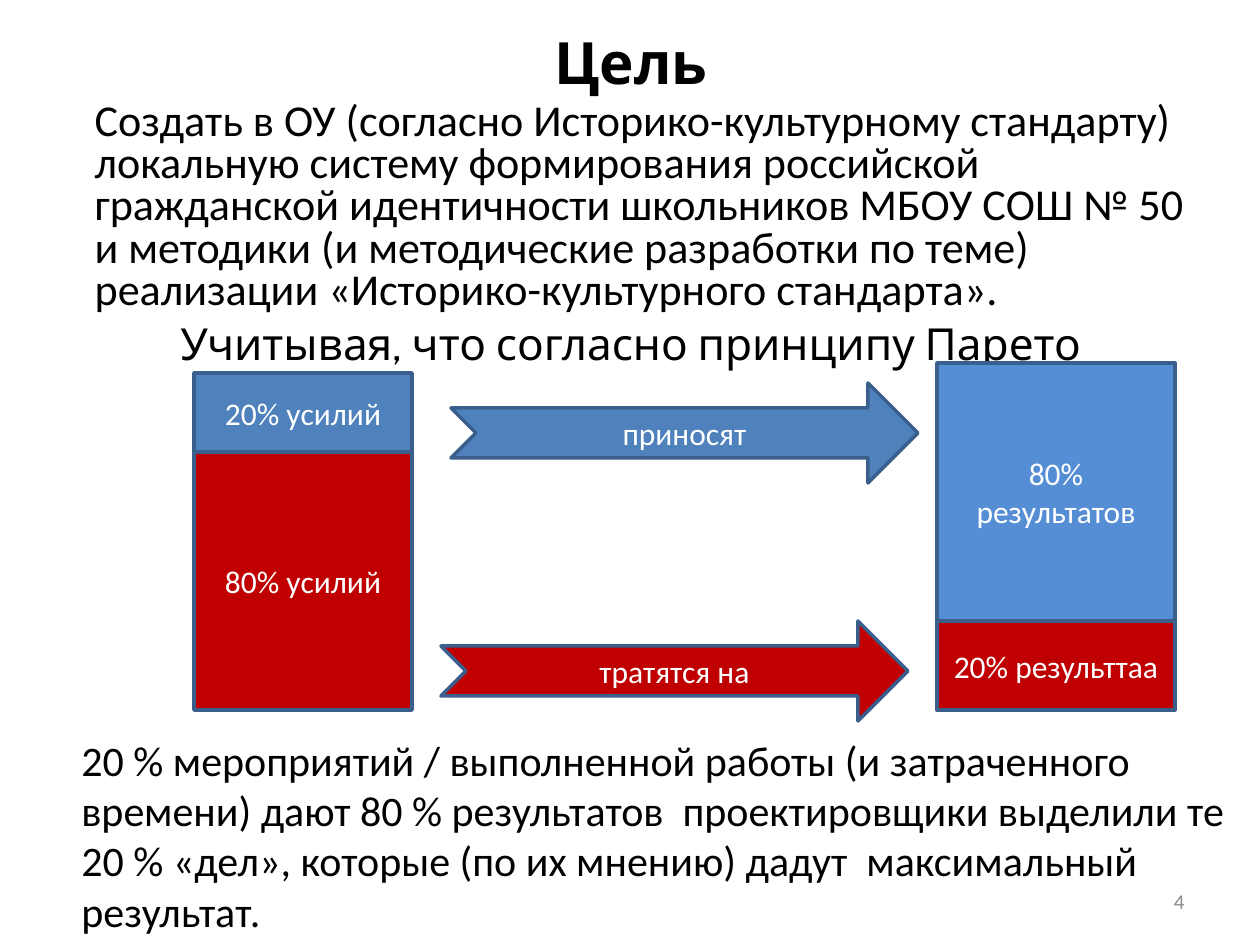
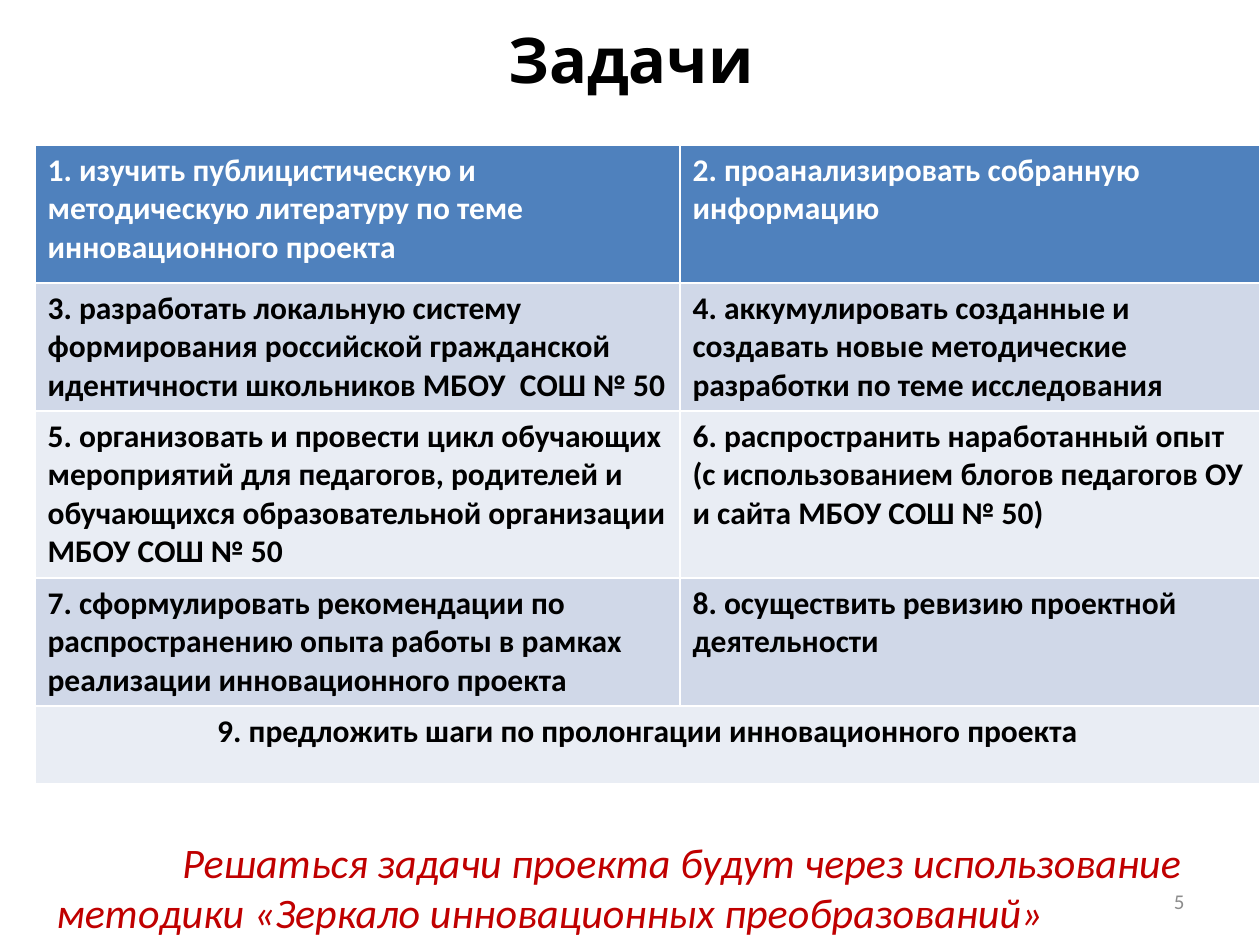
import pptx
import pptx.util
import pptx.dml.color
import pptx.enum.shapes
import pptx.enum.text

SCALE = 914400 / 126
HUES = {
    "black": "000000", "white": "FFFFFF", "gray": "8C8C8C", "edge": "3A5F8C",
    "blue": "4F81BD", "sky": "558ED5", "red": "C00000",
    "dark": "D0D8E8", "pale": "E9EDF4",
}
RGB = {name: pptx.dml.color.RGBColor.from_string(hue) for name, hue in HUES.items()}
ALIGN = pptx.enum.text.PP_ALIGN
ANCHOR = pptx.enum.text.MSO_ANCHOR
KIND = pptx.enum.shapes.MSO_SHAPE
HEAD = {"font": "Cabin", "align": ALIGN.CENTER, "anchor": ANCHOR.MIDDLE}


def px(*nums):
    return [round(num * SCALE) for num in nums]


def write(frame, text, size=18, font="Calibri", hue="black", bold=False, italic=False,
          align=ALIGN.LEFT, anchor=ANCHOR.TOP, left=0, first=0, space=1.0, before=0):
    frame.word_wrap = True
    frame.auto_size = pptx.enum.text.MSO_AUTO_SIZE.NONE
    frame.vertical_anchor = anchor
    para = frame.paragraphs[0]
    para.alignment = align
    para.line_spacing = space
    para.space_before = pptx.util.Pt(before)
    props = para._p.get_or_add_pPr()
    for key, num in (("marL", left), ("indent", first)):
        props.set(key, str(px(num)[0]))
    props.append(pptx.oxml.parse_xml(
        '<a:buNone xmlns:a="http://schemas.openxmlformats.org/drawingml/2006/main"/>'))
    run = para.add_run()
    run.text = text
    run.font.size = pptx.util.Pt(size)
    run.font.name = font
    run.font.bold = bold
    run.font.italic = italic
    run.font.color.rgb = RGB[hue]


deck = pptx.Presentation()
deck.slide_width, deck.slide_height = px(1260, 945)
goal = deck.slides.add_slide(deck.slide_layouts[1])
tasks = deck.slides.add_slide(deck.slide_layouts[5])

# Titles and page numbers
for slide, spot, text, size, bold, page in (
    (goal, (64, 314, 1134, 58), "Учитывая, что согласно принципу Парето", 25.2, False, "4"),
    (tasks, (64, 0, 1134, 117), "Задачи", 36, True, "5"),
):
    title = slide.shapes.title
    title.left, title.top, title.width, title.height = px(*spot)
    write(title.text_frame, text, size=size, bold=bold, **HEAD)
    foot = slide.shapes.add_textbox(*px(903, 876, 294, 50))
    write(foot.text_frame, page, size=12, hue="gray", align=ALIGN.RIGHT, anchor=ANCHOR.MIDDLE)

# Goal
head = goal.shapes.add_textbox(*px(64, 26, 1134, 80))
write(head.text_frame, "Цель", size=33.3, bold=True, space=0.9, **HEAD)

body = goal.placeholders[1]
body.left, body.top, body.width, body.height = px(35, 96, 1191, 248)
write(body.text_frame,
      "Создать в ОУ (согласно Историко-культурному стандарту) локальную систему "
      "формирования российской гражданской идентичности школьников МБОУ СОШ № 50 "
      "и методики (и методические разработки по теме) реализации "
      "«Историко-культурного стандарта».",
      size=25.2, left=47, space=0.8, before=5)

# Pareto blocks and arrows
for kind, spot, hue, text in (
    (KIND.RECTANGLE, (194, 373, 218, 79), "blue", "20% усилий"),
    (KIND.RECTANGLE, (937, 363, 238, 258), "sky", "80% результатов"),
    (KIND.RECTANGLE, (194, 452, 218, 258), "red", "80% усилий"),
    (KIND.RECTANGLE, (937, 621, 238, 89), "red", "20% результтаа"),
    (KIND.NOTCHED_RIGHT_ARROW, (451, 383, 467, 100), "blue", "приносят"),
    (KIND.NOTCHED_RIGHT_ARROW, (441, 621, 467, 100), "red", "тратятся на"),
):
    shape = goal.shapes.add_shape(kind, *px(*spot))
    shape.shadow.inherit = False
    shape.fill.solid()
    shape.fill.fore_color.rgb = RGB[hue]
    shape.line.color.rgb = RGB["edge"]
    shape.line.width = pptx.util.Pt(2)
    write(shape.text_frame, text, hue="white", align=ALIGN.CENTER, anchor=ANCHOR.MIDDLE)

note = goal.shapes.add_textbox(*px(69, 728, 1191, 217))
write(note.text_frame,
      "20 % мероприятий / выполненной работы (и затраченного времени) дают 80 % "
      "результатов  проектировщики выделили те 20 % «дел», которые (по их мнению) "
      "дадут  максимальный результат.", size=24)

# Tasks
ROWS = (
    (138, "blue", ("1. изучить публицистическую и методическую литературу по теме "
                   "инновационного проекта",
                   "2. проанализировать собранную информацию")),
    (127, "dark", ("3. разработать локальную систему формирования российской "
                   "гражданской идентичности школьников МБОУ  СОШ № 50",
                   "4. аккумулировать созданные и создавать новые методические "
                   "разработки по теме исследования")),
    (167, "pale", ("5. организовать и провести цикл обучающих мероприятий для педагогов, "
                   "родителей и обучающихся образовательной организации МБОУ СОШ № 50",
                   "6. распространить наработанный опыт (с использованием блогов "
                   "педагогов ОУ и сайта МБОУ СОШ № 50)")),
    (128, "dark", ("7. сформулировать рекомендации по распространению опыта работы "
                   "в рамках реализации инновационного проекта",
                   "8. осуществить ревизию проектной деятельности")),
    (78, "pale", ("9. предложить шаги по пролонгации инновационного проекта",)),
)
high = sum(row[0] for row in ROWS)
grid = tasks.shapes.add_table(len(ROWS), 2, *px(35, 145, 1225, high)).table
for col, wide in zip(grid.columns, px(645, 580)):
    col.width = wide
for r, (tall, hue, texts) in enumerate(ROWS):
    grid.rows[r].height = px(tall)[0]
    alone = len(texts) == 1
    if alone:
        grid.cell(r, 0).merge(grid.cell(r, 1))
    for c, text in enumerate(texts):
        cell = grid.cell(r, c)
        cell.fill.solid()
        cell.fill.fore_color.rgb = RGB[hue]
        write(cell.text_frame, text, bold=True, hue="black" if r else "white",
              align=ALIGN.CENTER if alone else ALIGN.LEFT)

note = tasks.shapes.add_textbox(*px(44, 830, 1191, 115))
write(note.text_frame,
      "Решаться задачи проекта будут через использование методики "
      "«Зеркало инновационных преобразований»",
      size=24, hue="red", italic=True, first=126)

deck.save("out.pptx")
